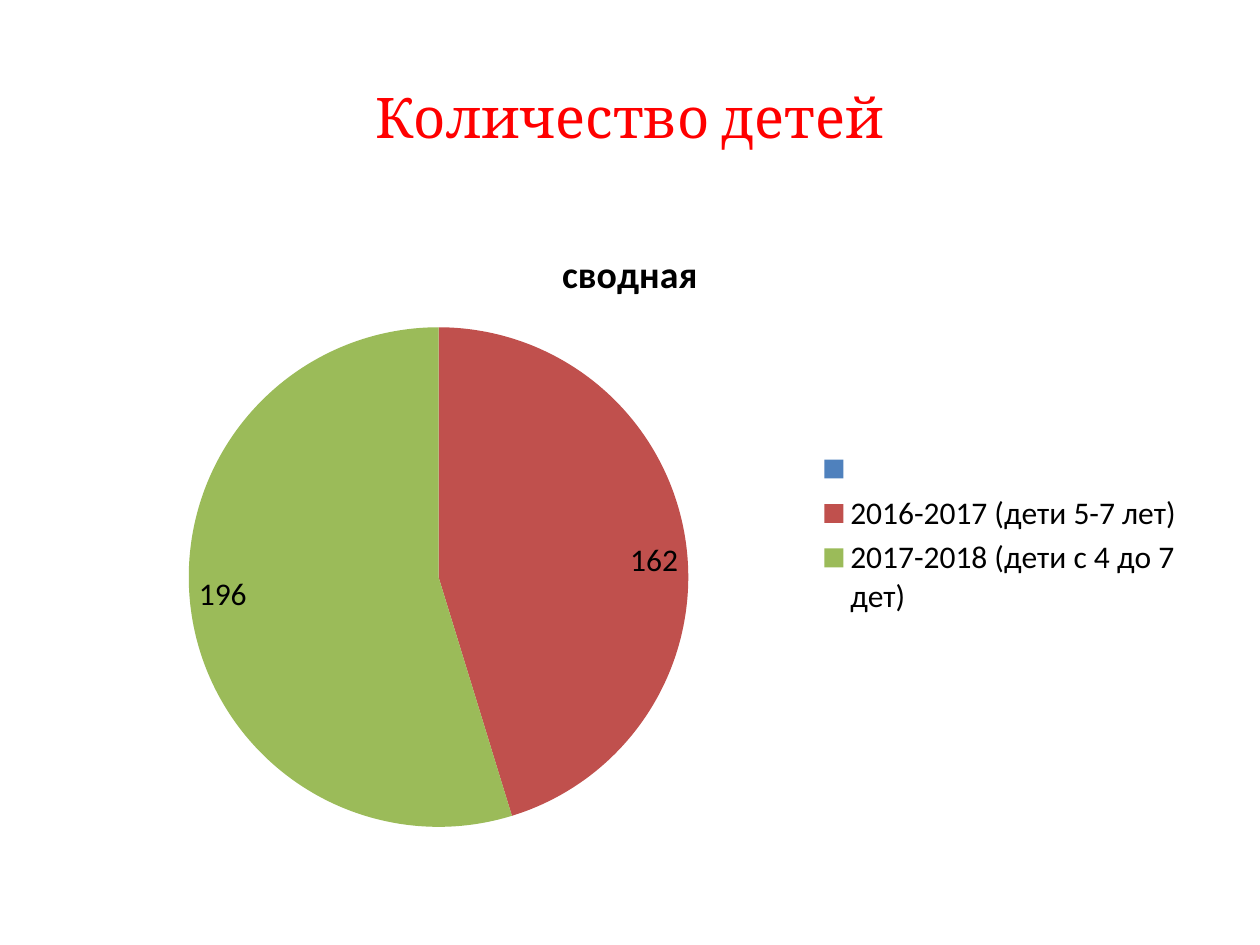
from pptx import Presentation
from pptx.chart.data import CategoryChartData
from pptx.dml.color import RGBColor
from pptx.enum.chart import XL_CHART_TYPE, XL_LABEL_POSITION, XL_LEGEND_POSITION
from pptx.enum.text import MSO_ANCHOR, PP_ALIGN
from pptx.util import Cm, Pt

PIE = XL_CHART_TYPE.PIE
INSIDE = XL_LABEL_POSITION.INSIDE_END
RIGHT = XL_LEGEND_POSITION.RIGHT
MIDDLE = MSO_ANCHOR.MIDDLE
CENTER = PP_ALIGN.CENTER

GROUPS = [
    ("", None, "4F81BD"),
    ("2016-2017 (дети 5-7 лет)", 162, "C0504D"),
    ("2017-2018 (дети с 4 до 7 дет)", 196, "9BBB59"),
]


def style(font, name, size, color):
    font.name = name
    font.size = Pt(size)
    font.color.rgb = RGBColor.from_string(color)


def add_title(slide, box, text):
    frame = slide.shapes.add_textbox(*box).text_frame
    frame.word_wrap = True
    frame.vertical_anchor = MIDDLE
    para = frame.paragraphs[0]
    para.text = text
    para.alignment = CENTER
    style(para.font, "Cambria", 32, "FF0000")


def add_pie(slide, box, name, groups):
    data = CategoryChartData()
    data.categories = [label for label, _, _ in groups]
    data.add_series(name, [value for _, value, _ in groups])
    chart = slide.shapes.add_chart(PIE, *box, data).chart
    style(chart.font, "Calibri", 18, "000000")

    # Heading above the pie
    chart.has_title = True
    head = chart.chart_title.text_frame.paragraphs[0]
    head.text = name
    style(head.font, "Calibri", 21.6, "000000")
    head.font.bold = True

    # Legend
    chart.has_legend = True
    chart.legend.position = RIGHT
    chart.legend.include_in_layout = False

    # Slices and their values
    plot = chart.plots[0]
    plot.vary_by_categories = True
    plot.has_data_labels = True
    plot.data_labels.show_value = True
    plot.data_labels.show_percentage = False
    plot.data_labels.position = INSIDE
    for i, (_, _, color) in enumerate(groups):
        fill = plot.series[0].points[i].format.fill
        fill.solid()
        fill.fore_color.rgb = RGBColor.from_string(color)


def main():
    deck = Presentation()
    deck.slide_width, deck.slide_height = Cm(25.4), Cm(19.05)
    slide = deck.slides.add_slide(deck.slide_layouts[6])
    left, width = Cm(1.27), Cm(22.86)
    add_title(slide, (left, Cm(0.76), width, Cm(3.18)), "Количество детей")
    add_pie(slide, (left, Cm(4.45), width, Cm(12.57)), "сводная", GROUPS)
    deck.save("out.pptx")


if __name__ == "__main__":
    main()
